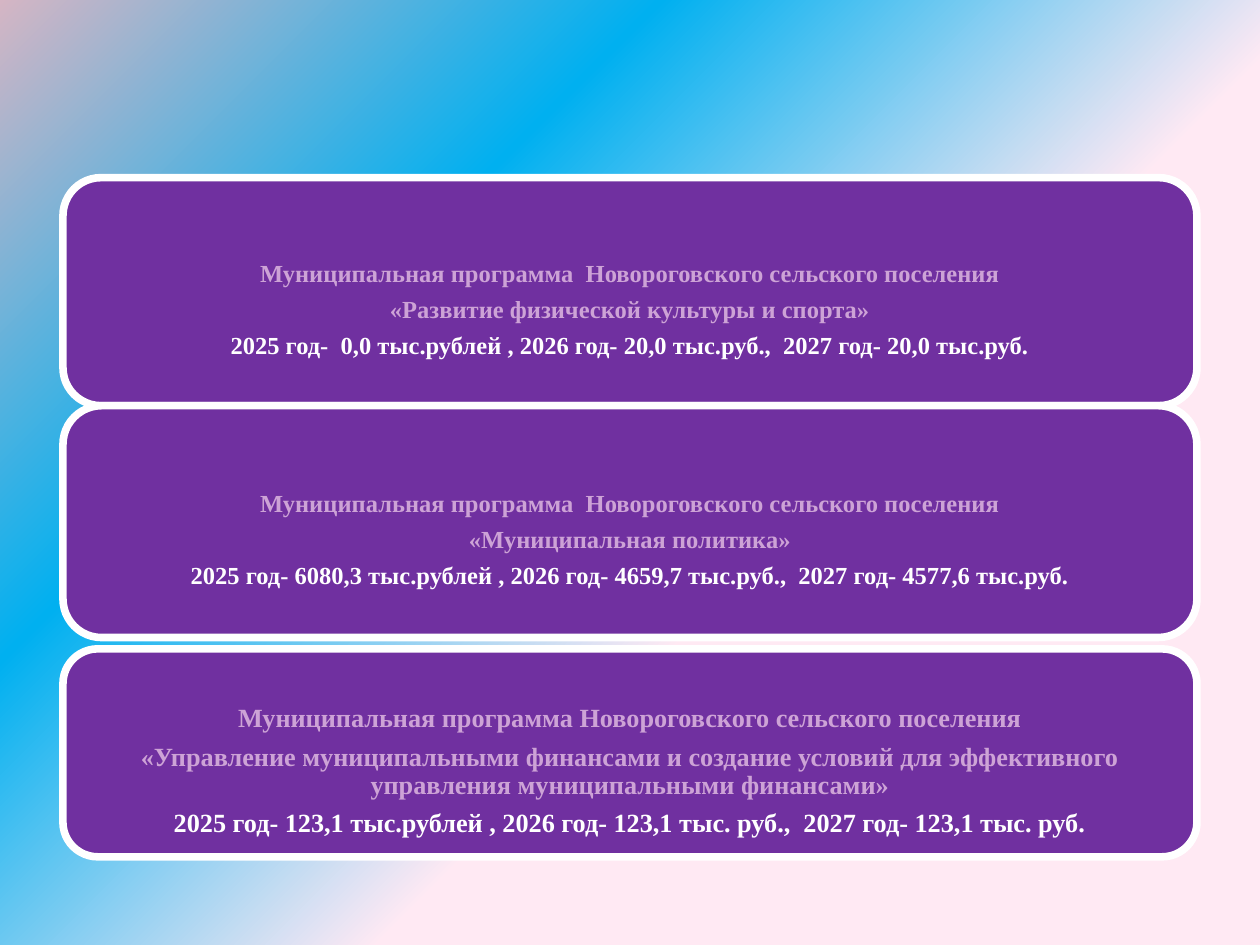
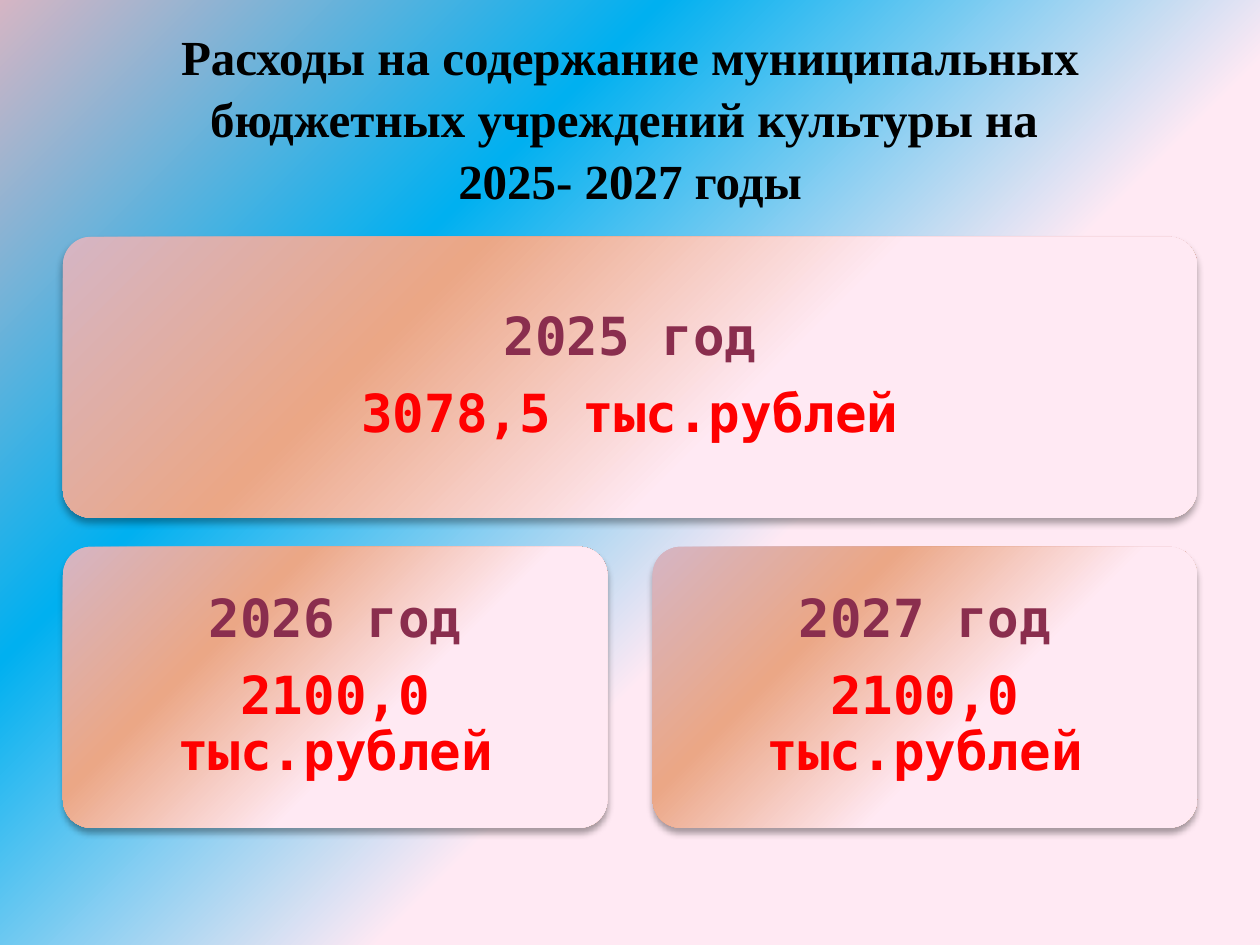
"""Builds two slides on the municipal programmes and the spending on culture."""
from lxml import etree
from pptx import Presentation
from pptx import util as u
from pptx.dml.color import RGBColor
from pptx.enum import shapes, text
from pptx.oxml import ns

COLORS = {
    "blush": "FFE9F3", "sky": "00B0F0", "mauve": "D5B5C4", "peach": "EBA786",
    "purple": "7030A0", "lilac": "CDA3D6", "white": "FFFFFF",
    "wine": "8A2E4E", "red": "FF0000", "black": "000000",
}
SERIF, MONO = "Times New Roman", "DejaVu Sans Mono"
LEFT, WIDTH = 0.5, 9
TITLE_ONLY, BLANK = 5, 6


class Deck:
    """Holds the style and the current slide."""

    def __init__(self):
        self.presentation = Presentation()
        self.presentation.slide_width = u.Inches(10)
        self.presentation.slide_height = u.Inches(7.5)
        self.slide = None
        master = self.presentation.slide_master
        self.gradient(master.background.fill, master.element, "sky")

    def add_slide(self, layout):
        layouts = self.presentation.slide_layouts
        self.slide = self.presentation.slides.add_slide(layouts[layout])

    def gradient(self, fill, owner, middle):
        fill.gradient()
        gradient = next(owner.iter(ns.qn("a:gradFill")))
        for child in list(gradient):
            gradient.remove(child)
        stops = etree.SubElement(gradient, ns.qn("a:gsLst"))
        for percent, name in ((40, "blush"), (70, middle), (100, "mauve")):
            stop = etree.SubElement(stops, ns.qn("a:gs"), pos=str(percent * 1000))
            etree.SubElement(stop, ns.qn("a:srgbClr"), val=COLORS[name])
        circle = etree.SubElement(gradient, ns.qn("a:path"))
        circle.set("path", "circle")
        etree.SubElement(circle, ns.qn("a:fillToRect"), l="100000", t="100000")

    def format(self, paragraph, size, font, color):
        paragraph.alignment = text.PP_ALIGN.CENTER
        paragraph.font.size = u.Pt(size)
        paragraph.font.name = font
        paragraph.font.bold = True
        paragraph.font.color.rgb = RGBColor.from_string(COLORS[color])

    def title(self, lines):
        title = self.slide.shapes.title
        title.left, title.top = u.Inches(LEFT), u.Inches(0.3)
        title.width, title.height = u.Inches(WIDTH), u.Inches(1.25)
        frame = title.text_frame
        frame.auto_size = text.MSO_AUTO_SIZE.NONE
        frame.vertical_anchor = text.MSO_ANCHOR.MIDDLE
        paragraph = frame.paragraphs[0]
        for index, line in enumerate(lines):
            if index:
                paragraph.add_line_break()
            paragraph.add_run().text = line
        paragraph.line_spacing = 1.05
        self.format(paragraph, 28, SERIF, "black")

    def box(self, left, top, width, height, lines, size, font, inset, top_inset):
        box = self.slide.shapes.add_shape(
            shapes.MSO_SHAPE.ROUNDED_RECTANGLE,
            u.Inches(left), u.Inches(top), u.Inches(width), u.Inches(height))
        box.shadow.inherit = False
        frame = box.text_frame
        frame.word_wrap = True
        frame.vertical_anchor = text.MSO_ANCHOR.MIDDLE
        frame.margin_left = frame.margin_right = u.Inches(inset)
        frame.margin_bottom = u.Inches(inset)
        frame.margin_top = u.Inches(top_inset)
        for index, (line, color) in enumerate(lines):
            paragraph = frame.add_paragraph() if index else frame.paragraphs[0]
            paragraph.text = line
            paragraph.line_spacing = 0.9
            paragraph.space_after = u.Pt(round(size * 0.38, 1))
            self.format(paragraph, size, font, color)
        return box

    def programme(self, top, height, size, heading, name, amounts):
        lines = [(heading, "lilac"), (name, "lilac"), (amounts, "white")]
        box = self.box(LEFT, top, WIDTH, height, lines, size, SERIF, 0.06, 0.36)
        box.fill.solid()
        box.fill.fore_color.rgb = RGBColor.from_string(COLORS["purple"])
        box.line.color.rgb = RGBColor.from_string(COLORS["white"])
        box.line.width = u.Pt(4.33)

    def year(self, left, top, width, year, amount):
        lines = [(f"{year} год", "wine"), (f"{amount} тыс.рублей", "red")]
        box = self.box(left, top, width, 2.23, lines, 30, MONO, 0.12, 0.12)
        box.adjustments[0] = 0.1
        self.gradient(box.fill, box.element, "peach")
        box.line.fill.background()
        effects = next(box.element.iter(ns.qn("a:effectLst")))
        shadow = etree.SubElement(
            effects, ns.qn("a:outerShdw"), blurRad=str(u.Pt(4)),
            dist=str(u.Pt(3)), dir="5400000", rotWithShape="0")
        color = etree.SubElement(shadow, ns.qn("a:srgbClr"), val=COLORS["black"])
        etree.SubElement(color, ns.qn("a:alpha"), val="35000")


def main():
    deck = Deck()

    deck.add_slide(BLANK)
    wide_heading = "Муниципальная программа  Новороговского сельского поселения"
    deck.programme(
        1.41, 1.81, 14, wide_heading, "«Развитие физической культуры и спорта»",
        "2025 год-  0,0 тыс.рублей , 2026 год- 20,0 тыс.руб.,  2027 год- 20,0 тыс.руб.")
    deck.programme(
        3.22, 1.84, 14, wide_heading, "«Муниципальная политика»",
        "2025 год- 6080,3 тыс.рублей , 2026 год- 4659,7 тыс.руб.,  2027 год- 4577,6 тыс.руб.")
    deck.programme(
        5.15, 1.65, 15, "Муниципальная программа Новороговского сельского поселения",
        "«Управление муниципальными финансами и создание условий для эффективного "
        "управления муниципальными финансами»",
        "2025 год- 123,1 тыс.рублей , 2026 год- 123,1 тыс. руб.,  2027 год- 123,1 тыс. руб.")

    deck.add_slide(TITLE_ONLY)
    deck.title(["Расходы на содержание муниципальных бюджетных учреждений культуры на ",
                "2025- 2027 годы"])
    deck.year(LEFT, 1.88, WIDTH, 2025, "3078,5")
    gap = 0.36
    column = (WIDTH - gap) / 2
    for index, year in enumerate((2026, 2027)):
        deck.year(LEFT + index * (column + gap), 4.34, column, year, "2100,0")

    deck.presentation.save("out.pptx")


if __name__ == "__main__":
    main()
